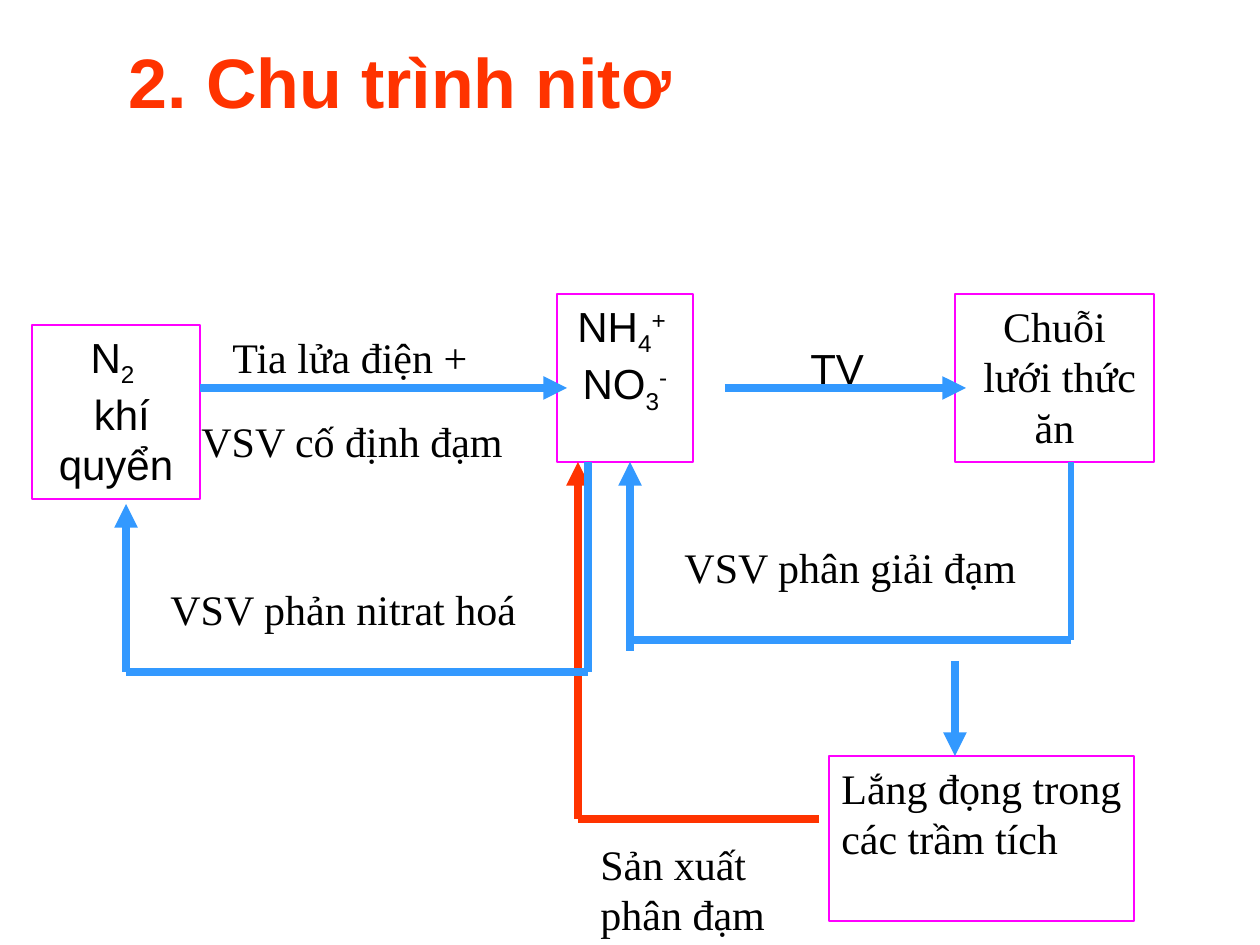
import pptx
import pptx.util
import pptx.dml.color
import pptx.enum.shapes
import pptx.enum.text
import pptx.oxml.ns
from lxml import etree

PX = pptx.util.Inches(1) / 126
SANS, SERIF = "Arial", "Times New Roman"
BLACK, WHITE, MAGENTA, RED, BLUE = "000000", "FFFFFF", "FF00FF", "FF3300", "3399FF"
SUB, SUPER = -25000, 30000

# Paragraphs are lists of runs; a run is (text, baseline shift).
# left, top, width, height, font, centred, outline, paragraphs
BOXES = [
    (32, 325, 168, 174, SANS, True, MAGENTA,
     [[("N", 0), ("2 ", SUB)], [(" khí quyển", 0)]]),
    (557, 294, 136, 168, SANS, True, MAGENTA,
     [[("NH", 0), ("4", SUB), ("+ ", SUPER)], [("NO", 0), ("3", SUB), ("-", SUPER)]]),
    (955, 294, 199, 168, SERIF, True, MAGENTA,
     [[("Chuỗi", 0)], [(" lưới thức ăn", 0)]]),
    (829, 756, 305, 165, SERIF, False, MAGENTA,
     [[("Lắng đọng trong", 0)], [("các trầm tích", 0)]]),
    (588, 832, 210, 114, SERIF, False, WHITE,
     [[("Sản xuất phân đạm", 0)]]),
]

# left, top, width, height, text, font, size, colour, bold, wrap
LABELS = [
    (116, 32, 703, 97, "2. Chu trình nitơ", SANS, 40, RED, True, True),
    (220, 325, 273, 63, "Tia lửa điện +", SERIF, 24, BLACK, False, False),
    (189, 409, 339, 63, "VSV cố định đạm", SERIF, 24, BLACK, False, False),
    (798, 336, 91, 63, "TV", SANS, 24, BLACK, False, False),
    (158, 577, 399, 63, "VSV phản nitrat hoá", SERIF, 24, BLACK, False, True),
    (672, 535, 369, 63, "VSV phân giải đạm", SERIF, 24, BLACK, False, False),
]

# from x, from y, to x, to y, colour, width in points, arrowhead
LINES = [
    (578, 819, 578, 462, RED, 4.5, True),
    (819, 819, 578, 819, RED, 4.5, False),
    (725, 388, 966, 388, BLUE, 4.5, True),
    (200, 388, 567, 388, BLUE, 4.5, True),
    (955, 661, 955, 756, BLUE, 4.5, True),
    (588, 462, 588, 672, BLUE, 4.5, False),
    (126, 672, 126, 504, BLUE, 4.5, True),
    (588, 672, 126, 672, BLUE, 4.5, False),
    (1071, 640, 630, 640, BLUE, 4.5, False),
    (630, 651, 630, 462, BLUE, 4.5, True),
    (1071, 462, 1071, 640, BLUE, 3, False),
]


def emu(*lengths):
    return [round(length * PX) for length in lengths]


def rgb(value):
    return pptx.dml.color.RGBColor.from_string(value)


def style_font(font, name, size, colour, bold=False):
    font.name = name
    font.size = pptx.util.Pt(size)
    font.color.rgb = rgb(colour)
    font.bold = bold


def add_box(slide, left, top, width, height, font, centred, outline, paragraphs):
    box = slide.shapes.add_shape(
        pptx.enum.shapes.MSO_SHAPE.RECTANGLE, *emu(left, top, width, height))
    box.shadow.inherit = False
    box.fill.solid()
    box.fill.fore_color.rgb = rgb(WHITE)
    box.line.color.rgb = rgb(outline)
    box.line.width = pptx.util.Pt(0.75)
    frame = box.text_frame
    frame.word_wrap = True
    frame.vertical_anchor = pptx.enum.text.MSO_ANCHOR.TOP
    align = pptx.enum.text.PP_ALIGN
    for index, runs in enumerate(paragraphs):
        para = frame.add_paragraph() if index else frame.paragraphs[0]
        para.alignment = align.CENTER if centred else align.LEFT
        style_font(para.font, font, 24, BLACK)
        for text, baseline in runs:
            span = para.add_run()
            span.text = text
            if baseline:
                span.font._element.set("baseline", str(baseline))


def add_label(slide, left, top, width, height, text, font, size, colour, bold, wrap):
    label = slide.shapes.add_textbox(*emu(left, top, width, height))
    frame = label.text_frame
    frame.word_wrap = wrap
    frame.text = text
    style_font(frame.paragraphs[0].font, font, size, colour, bold)


def add_line(slide, x1, y1, x2, y2, colour, width, arrow):
    line = slide.shapes.add_connector(
        pptx.enum.shapes.MSO_CONNECTOR.STRAIGHT, *emu(x1, y1, x2, y2))
    line.line.color.rgb = rgb(colour)
    line.line.width = pptx.util.Pt(width)
    if arrow:
        etree.SubElement(line.line._get_or_add_ln(),
                         pptx.oxml.ns.qn("a:tailEnd"), type="triangle")
    etree.SubElement(line._element.spPr, pptx.oxml.ns.qn("a:effectLst"))


def main():
    deck = pptx.Presentation()
    deck.slide_width, deck.slide_height = emu(1260, 945)
    slide = deck.slides.add_slide(deck.slide_layouts[6])
    for box in BOXES:
        add_box(slide, *box)
    for line in LINES:
        add_line(slide, *line)
    for label in LABELS:
        add_label(slide, *label)
    deck.save("out.pptx")


if __name__ == "__main__":
    main()
